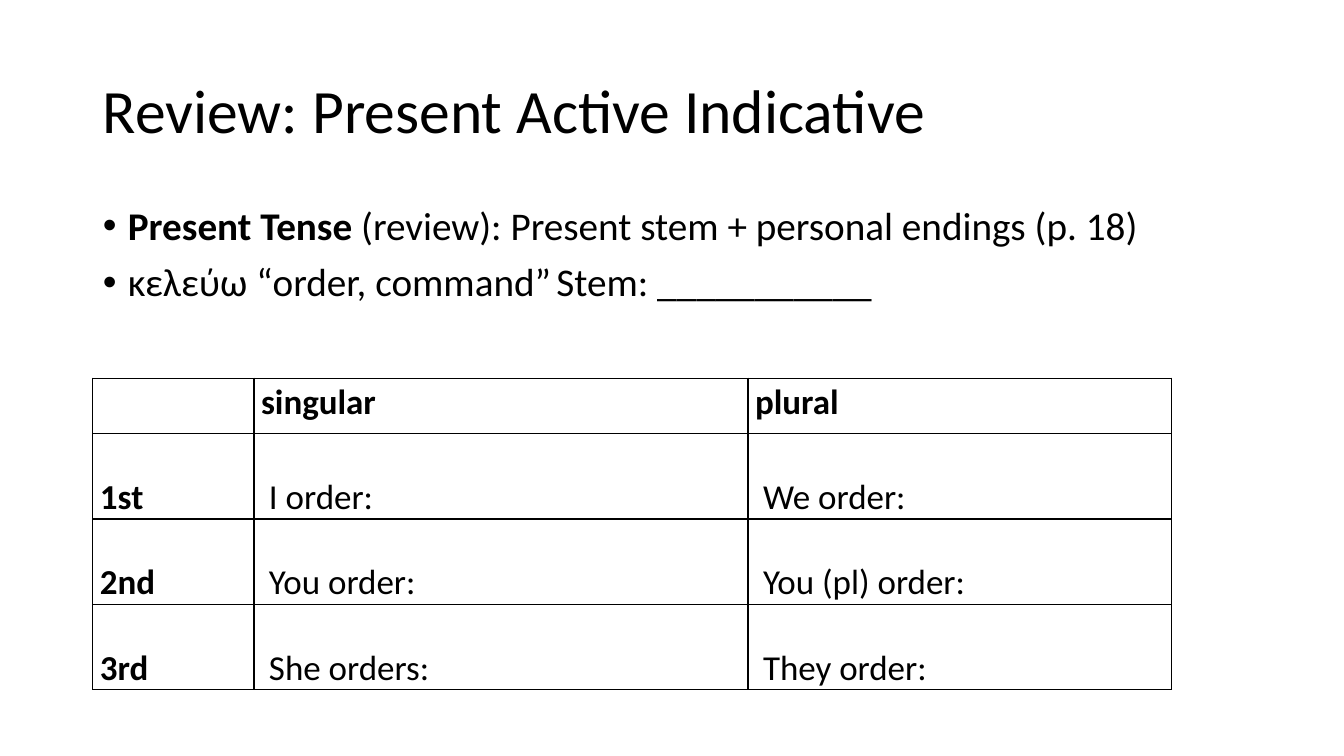
from dataclasses import dataclass

from lxml.etree import SubElement
from pptx import Presentation
from pptx.dml.color import RGBColor
from pptx.enum.text import MSO_ANCHOR as Anchor, MSO_AUTO_SIZE as AutoSize, PP_ALIGN as Align
from pptx.oxml.ns import qn
from pptx.util import Cm, Pt


@dataclass(frozen=True)
class Theme:
    font: str = "Calibri"
    ink: RGBColor = RGBColor(0, 0, 0)
    title: int = 44
    body: int = 28
    table: int = 25
    border: int = 1


class Deck:
    def __init__(self, theme):
        self.theme = theme
        self.prs = Presentation()
        self.prs.slide_width, self.prs.slide_height = Cm(33.87), Cm(19.05)
        self.s = self.prs.slides.add_slide(self.prs.slide_layouts[1])

    def style(self, r, size, bold=False):
        r.font.name, r.font.size, r.font.bold = self.theme.font, Pt(size), bold
        r.font.color.rgb = self.theme.ink

    def place(self, sp, left, top, width, height):
        sp.left, sp.top, sp.width, sp.height = Cm(left), Cm(top), Cm(width), Cm(height)
        sp.text_frame.auto_size = AutoSize.NONE

    def title(self, text, *box):
        sp = self.s.shapes.title
        self.place(sp, *box)
        tf = sp.text_frame
        tf.text = text
        tf.vertical_anchor = Anchor.MIDDLE
        p = tf.paragraphs[0]
        p.alignment, p.line_spacing = Align.LEFT, 0.9
        self.style(p.runs[0], self.theme.title)

    def bullets(self, items, *box):
        """Each item is a pair: bold lead and plain text."""
        sp = self.s.placeholders[1]
        self.place(sp, *box)
        tf = sp.text_frame
        for i, item in enumerate(items):
            p = tf.paragraphs[0] if i == 0 else tf.add_paragraph()
            p.line_spacing, p.space_before = 0.9, Pt(10)
            pPr = p._p.get_or_add_pPr()
            pPr.set("marL", str(Cm(0.63)))
            pPr.set("indent", str(-Cm(0.63)))
            SubElement(pPr, qn("a:buChar"), char="•")
            for text, bold in zip(item, (True, False)):
                if text:
                    r = p.add_run()
                    r.text = text
                    self.style(r, self.theme.body, bold)

    def borders(self, cell):
        tcPr = cell._tc.get_or_add_tcPr()
        for i, side in enumerate(("lnL", "lnR", "lnT", "lnB")):
            ln = SubElement(tcPr, qn(f"a:{side}"), w=str(Pt(self.theme.border)))
            fill = SubElement(ln, qn("a:solidFill"))
            SubElement(fill, qn("a:srgbClr"), val=str(self.theme.ink))
            tcPr.insert(i, ln)

    def table(self, rows, left, top, widths, heights):
        tbl = self.s.shapes.add_table(len(rows), len(widths), Cm(left), Cm(top),
                                      Cm(sum(widths)), Cm(sum(heights))).table
        tbl.first_row = tbl.horz_banding = False
        for col, width in zip(tbl.columns, widths):
            col.width = Cm(width)
        for i, (row, texts) in enumerate(zip(tbl.rows, rows)):
            row.height = Cm(heights[i])
            for j, (cell, text) in enumerate(zip(row.cells, texts)):
                heading = i == 0 or j == 0
                cell.fill.background()
                cell.margin_left = Cm(0.18 if heading else 0.38)
                cell.margin_right = Cm(0.18)
                cell.margin_top = cell.margin_bottom = 0
                self.borders(cell)
                if text:
                    cell.text_frame.text = text
                    p = cell.text_frame.paragraphs[0]
                    p.line_spacing = 1.07 if i == 0 else 2.0
                    self.style(p.runs[0], self.theme.table, heading)


def main():
    deck = Deck(Theme())
    left, width = 2.34, 29.21

    # Title and review points
    deck.title("Review: Present Active Indicative", left, 1.02, width, 3.68)
    deck.bullets([
        ("Present Tense", " (review): Present stem + personal endings (p. 18)"),
        ("", "κελεύω “order, command”\tStem: ___________"),
    ], left, 5.08, width, 3.68)

    # Conjugation table
    deck.table([
        ("", "singular", "plural"),
        ("1st", "I order:", "We order:"),
        ("2nd", "You order:", "You (pl) order:"),
        ("3rd", "She orders:", "They order:"),
    ], left, 9.53, (4.06, 12.45, 10.67), (1.4,) + (1.96,) * 3)

    deck.prs.save("out.pptx")


if __name__ == "__main__":
    main()
